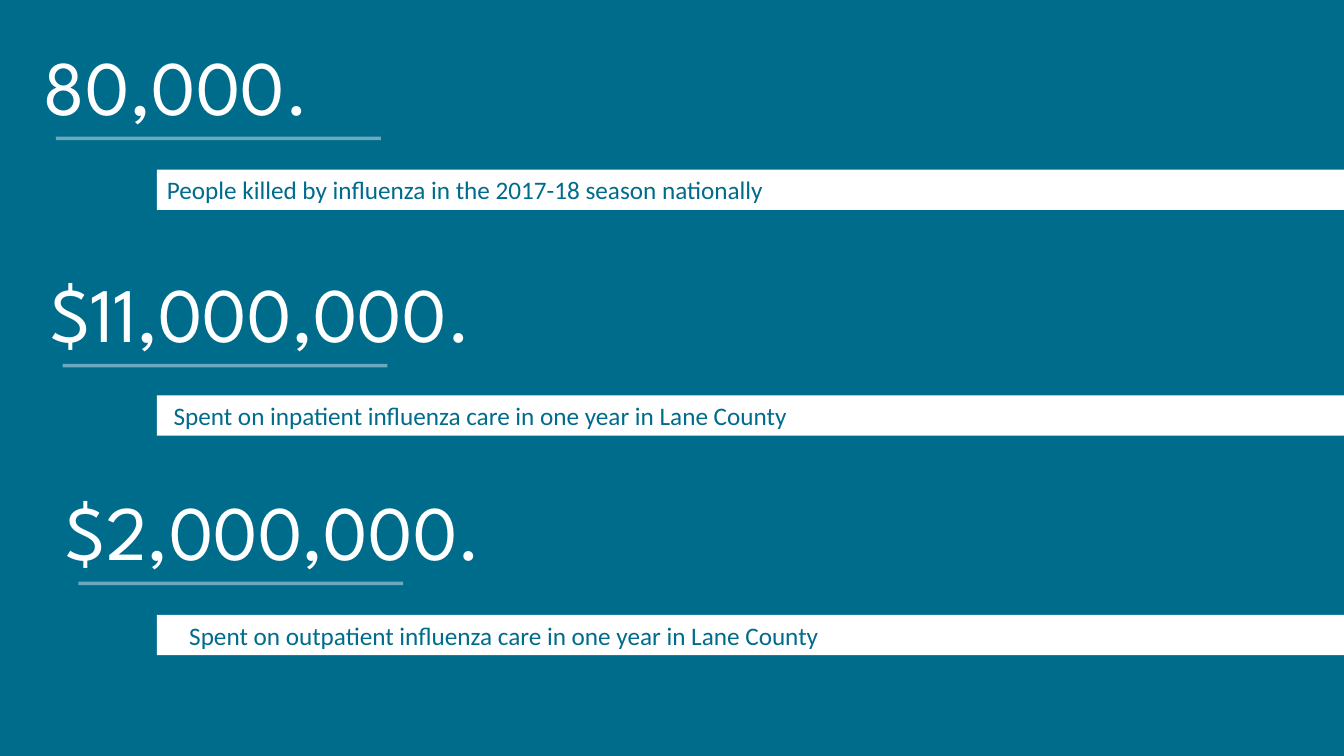
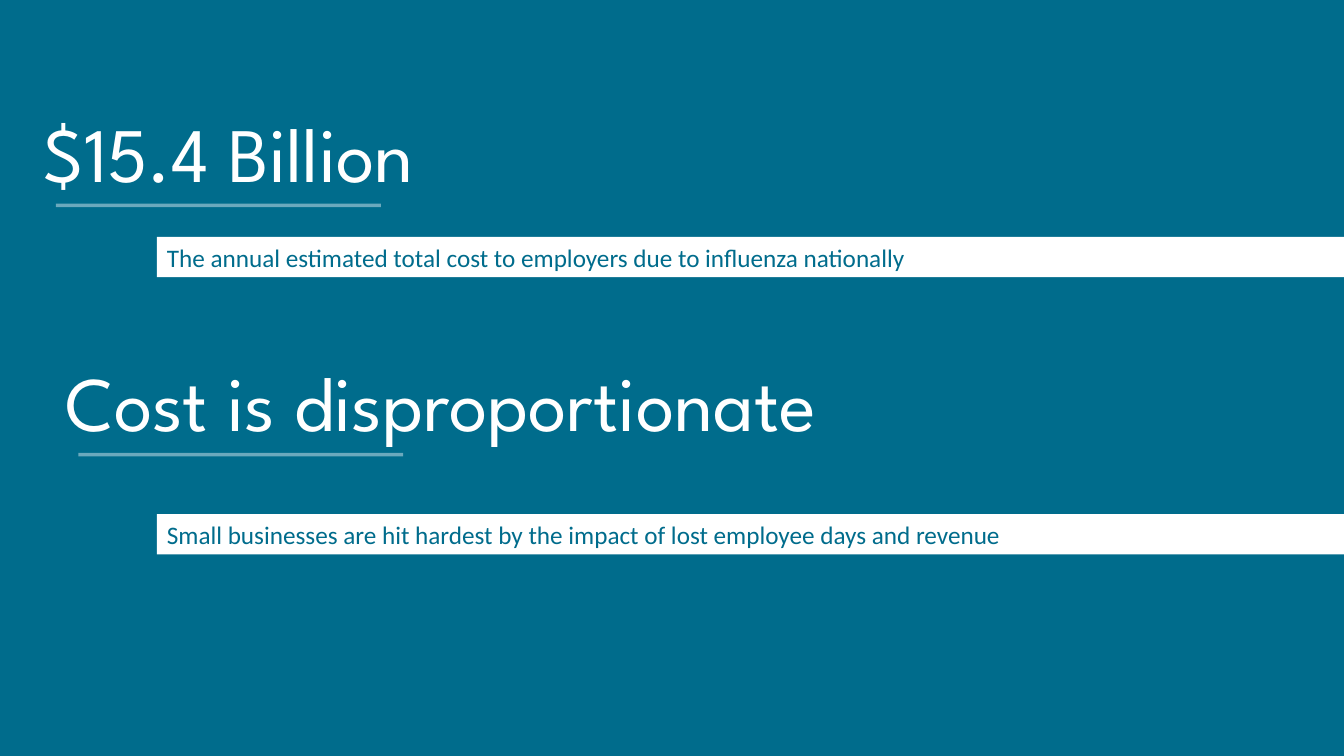
import dataclasses

import pptx
import pptx.dml.color
import pptx.enum.shapes
import pptx.enum.text
import pptx.oxml
import pptx.oxml.ns
import pptx.util
from lxml import etree


@dataclasses.dataclass(frozen=True)
class Theme:
    """Colours, fonts, type sizes and the grid that both slides share."""
    teal: str = "006C8C"
    white: str = "FFFFFF"
    mist: str = "D6E7EE"
    headline_font: str = "League Spartan"
    caption_font: str = "Calibri"
    headline_size: float = 55
    caption_size: float = 18
    rule_weight: float = 2.5
    rule_opacity: int = 50
    columns: int = 120
    rows: float = 67.5
    cell: float = 1 / 9
    headline_height: float = 9.3
    rule_indent: float = 2
    rule_drop: float = 9.35
    rule_length: float = 29
    band_left: float = 14
    band_height: float = 3.6
    inset: float = 0.9


@dataclasses.dataclass(frozen=True)
class Fact:
    """A headline and its caption, placed in grid columns and rows."""
    headline: str
    caption: str
    left: float
    top: float
    band_drop: float = 12.15
    caption_indent: float = 0


THEME = Theme()

HUMAN_COST = [
    Fact("80,000.", "People killed by influenza in the 2017-18 season nationally", 3, 3),
    Fact("$11,000,000.", "Spent on inpatient influenza care in one year in Lane County",
         3.6, 23.3, band_drop=12, caption_indent=0.6),
    Fact("$2,000,000.", "Spent on outpatient influenza care in one year in Lane County",
         5, 42.75, caption_indent=2),
]
EMPLOYER_COST = [
    Fact("$15.4 Billion",
         "The annual estimated total cost to employers due to influenza nationally", 3, 9),
    Fact("Cost is disproportionate",
         "Small businesses are hit hardest by the impact of lost employee days and revenue",
         5, 31.25, band_drop=14.65),
]


def grid(count):
    """Turn a number of grid cells into a length."""
    return pptx.util.Inches(count * THEME.cell)


def colour(value):
    """Turn a hex string into a colour."""
    return pptx.dml.color.RGBColor.from_string(value)


def write(box, text, font, size, ink):
    """Write one left-aligned paragraph in a box."""
    frame = box.text_frame
    frame.word_wrap = True
    frame.text = text
    para = frame.paragraphs[0]
    para.alignment = pptx.enum.text.PP_ALIGN.LEFT
    para.font.name = font
    para.font.size = pptx.util.Pt(size)
    para.font.color.rgb = colour(ink)
    return frame


def add_headline(page, fact, width, is_title):
    """Add a large headline, in the title placeholder for the first fact."""
    place = [grid(n) for n in (fact.left, fact.top, width, THEME.headline_height)]
    if is_title:
        box = page.shapes.title
        box.left, box.top, box.width, box.height = place
    else:
        box = page.shapes.add_textbox(*place)
    frame = write(box, fact.headline, THEME.headline_font, THEME.headline_size, THEME.white)
    frame.vertical_anchor = pptx.enum.text.MSO_ANCHOR.TOP
    frame.auto_size = pptx.enum.text.MSO_AUTO_SIZE.SHAPE_TO_FIT_TEXT


def add_rule(page, fact):
    """Add the translucent line under a headline."""
    left, top = fact.left + THEME.rule_indent, fact.top + THEME.rule_drop
    rule = page.shapes.add_connector(
        pptx.enum.shapes.MSO_CONNECTOR.STRAIGHT,
        grid(left), grid(top), grid(left + THEME.rule_length), grid(top))
    rule.line.width = pptx.util.Pt(THEME.rule_weight)
    rule.line.color.rgb = colour(THEME.mist)
    qualified = pptx.oxml.ns.qn
    ink = rule.line._get_or_add_ln().find(".//" + qualified("a:srgbClr"))
    etree.SubElement(ink, qualified("a:alpha"), val=str(THEME.rule_opacity * 1000))
    etree.SubElement(rule._element.spPr, qualified("a:effectLst"))


def add_band(page, fact):
    """Add the white band that holds a caption and runs to the right edge."""
    band = page.shapes.add_shape(
        pptx.enum.shapes.MSO_SHAPE.RECTANGLE,
        grid(THEME.band_left), grid(fact.top + fact.band_drop),
        grid(THEME.columns - THEME.band_left), grid(THEME.band_height))
    band.shadow.inherit = False
    band.fill.solid()
    band.fill.fore_color.rgb = colour(THEME.white)
    band.line.fill.background()
    frame = write(band, fact.caption, THEME.caption_font, THEME.caption_size, THEME.teal)
    frame.margin_left = grid(THEME.inset + fact.caption_indent)
    frame.vertical_anchor = pptx.enum.text.MSO_ANCHOR.MIDDLE


def add_page(deck, facts, headline_width):
    """Add a slide of facts."""
    page = deck.slides.add_slide(deck.slide_layouts.get_by_name("Title Only"))
    for index, fact in enumerate(facts):
        add_headline(page, fact, headline_width, is_title=index == 0)
        add_rule(page, fact)
        add_band(page, fact)


def main():
    """Build the deck and save it."""
    deck = pptx.Presentation()
    deck.slide_width = grid(THEME.columns)
    deck.slide_height = grid(THEME.rows)
    backdrop = deck.slide_master.background.fill
    backdrop.solid()
    backdrop.fore_color.rgb = colour(THEME.teal)
    add_page(deck, HUMAN_COST, headline_width=78)
    add_page(deck, EMPLOYER_COST, headline_width=114)
    deck.save("out.pptx")


if __name__ == "__main__":
    main()
